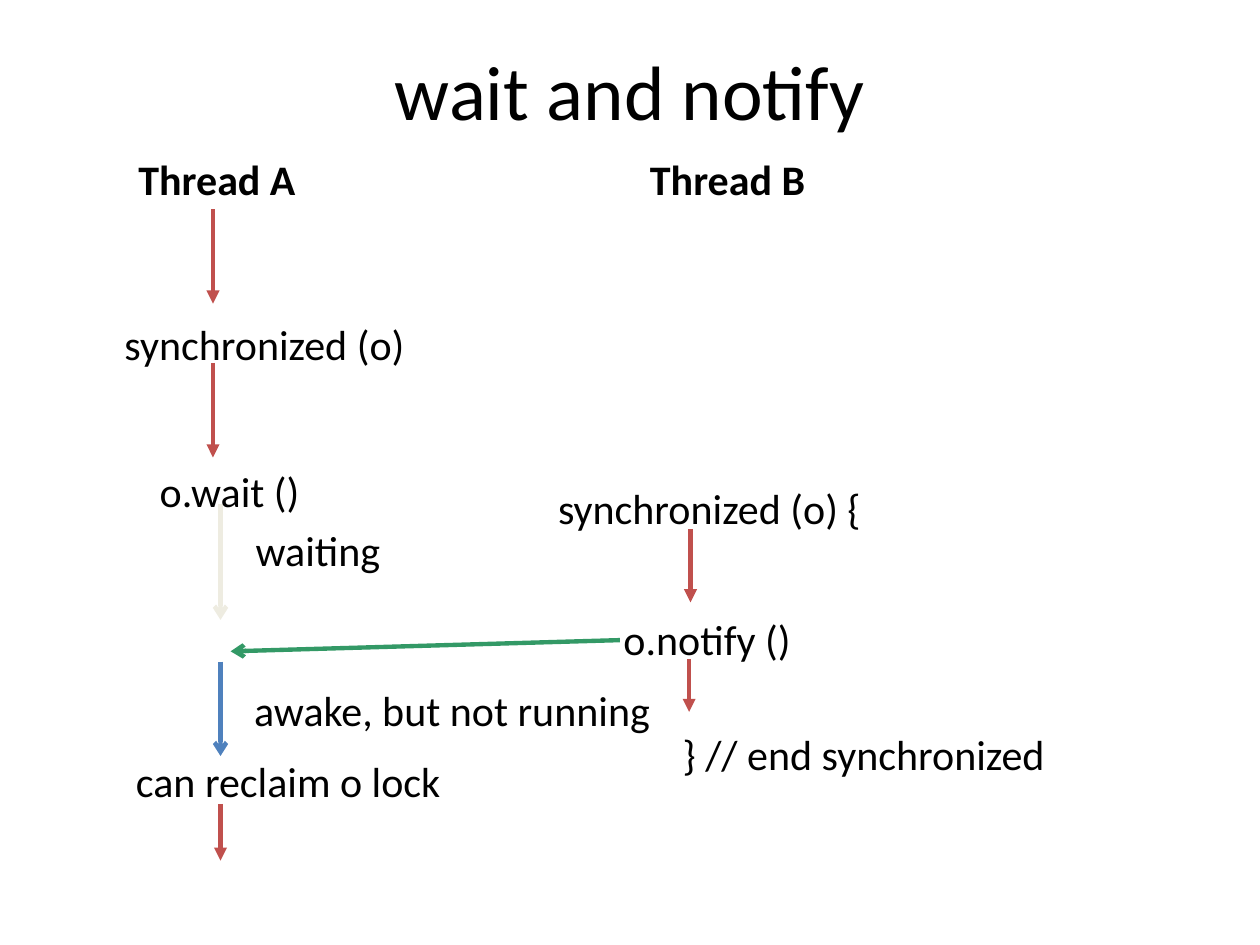
from pptx import Presentation
from pptx.dml.color import RGBColor
from pptx.enum.shapes import MSO_CONNECTOR as CONN
from pptx.enum.text import MSO_ANCHOR as ANCHOR, MSO_AUTO_SIZE as FIT, PP_ALIGN as ALIGN
from pptx.oxml.ns import qn
from pptx.util import Pt
from lxml import etree

RUNNING, WAITING, AWAKE, SIGNAL = "C0504D", "EEECE1", "4F81BD", "339966"


def color(value):
    return RGBColor.from_string(value)


def write(tf, text, size=24, bold=False, align=ALIGN.LEFT, fill="000000"):
    p = tf.paragraphs[0]
    p.alignment = align
    r = p.add_run()
    r.text = text
    r.font.name = "Calibri"
    r.font.size = Pt(size)
    r.font.bold = bold
    r.font.color.rgb = color(fill)


def add_label(slide, text, x, y, w, **fmt):
    tf = slide.shapes.add_textbox(Pt(x), Pt(y), Pt(w), Pt(36)).text_frame
    tf.word_wrap = False
    tf.auto_size = FIT.SHAPE_TO_FIT_TEXT
    write(tf, text, **fmt)


def add_arrow(slide, x1, y1, x2, y2, line=RUNNING, head="triangle"):
    s = slide.shapes.add_connector(CONN.STRAIGHT, Pt(x1), Pt(y1), Pt(x2), Pt(y2))
    s.line.color.rgb = color(line)
    s.line.width = Pt(2.5)
    etree.SubElement(s.line._get_or_add_ln(), qn("a:tailEnd"), type=head)
    etree.SubElement(s._element.spPr, qn("a:effectLst"))


def add_title(slide, text, x, y, w, h):
    sp = slide.shapes.title
    sp.left, sp.top, sp.width, sp.height = Pt(x), Pt(y), Pt(w), Pt(h)
    sp.text_frame.vertical_anchor = ANCHOR.MIDDLE
    write(sp.text_frame, text, size=44, align=ALIGN.CENTER)


def add_thread(slide, x, y, heading, steps, arrows):
    """Steps are (text, dx, dy, width); arrows are (dx, top, bottom, format)."""
    name, dx, width = heading
    for ax, top, bottom, fmt in arrows:
        add_arrow(slide, x + ax, y + top, x + ax, y + bottom, **fmt)
    add_label(slide, name, x + dx, y, width, bold=True)
    for text, sx, sy, w in steps:
        add_label(slide, text, x + sx, y + sy, w)


def main():
    prs = Presentation()
    prs.slide_width, prs.slide_height = Pt(720), Pt(540)
    slide = prs.slides.add_slide(prs.slide_layouts[5])
    add_title(slide, "wait and notify", 36, 6, 648, 90)
    add_thread(
        slide, 64, 84.2, ("Thread A", 8, 105),
        steps=[
            ("synchronized (o)", 0, 94.4, 176.4),
            ("o.wait ()", 20.2, 178, 95),
            ("waiting", 75, 211.7, 86.4),
            ("awake, but not running", 74.2, 303.2, 242.6),
            ("can reclaim o lock", 6.6, 344.2, 190),
        ],
        arrows=[
            (57.7, 35.3, 89.3, {}),
            (57.7, 123.2, 177.2, {}),
            (62, 203.8, 270, {"line": WAITING, "head": "arrow"}),
            (62, 293.8, 347.8, {"line": AWAKE, "head": "arrow"}),
            (62, 375.2, 407.6, {}),
        ])
    add_thread(
        slide, 311.8, 84.2, ("Thread B", 52.5, 104.4),
        steps=[
            ("synchronized (o) {", 0, 188, 189.4),
            ("o.notify ()", 37.4, 262.8, 111),
            ("} // end synchronized", 71.2, 328.4, 223.2),
        ],
        arrows=[(82.8, 218.2, 260, {}), (82, 292.4, 322.6, {})])
    add_arrow(slide, 354.2, 365.8, 131.8, 372.2, line=SIGNAL, head="arrow")
    prs.save("out.pptx")


if __name__ == "__main__":
    main()
